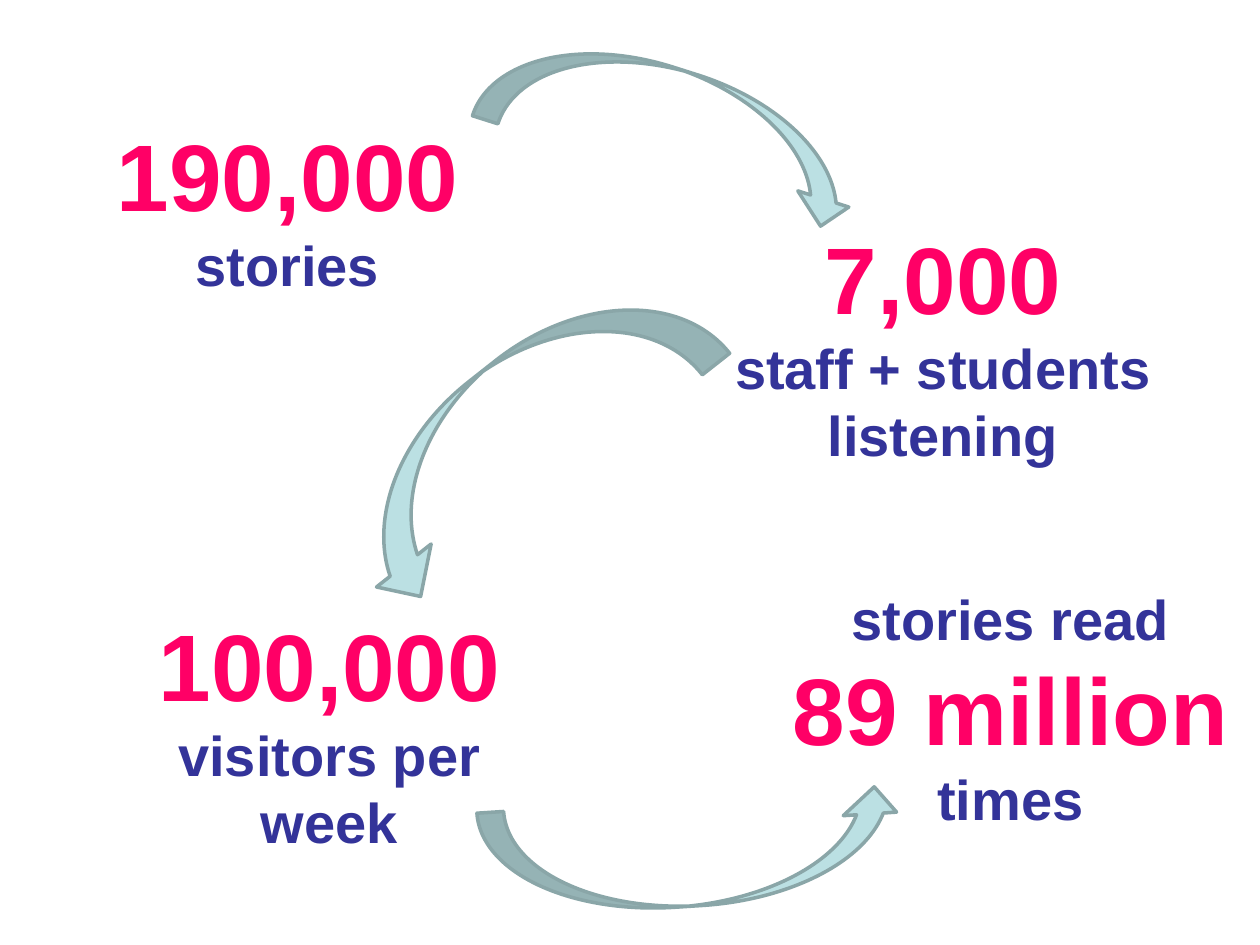
from pptx import Presentation
from pptx.dml.color import RGBColor
from pptx.enum.shapes import MSO_SHAPE as SHAPE
from pptx.enum.text import MSO_AUTO_SIZE as AUTO, PP_ALIGN as ALIGN
from pptx.util import Emu, Pt

PX = 914400 / 126
PINK, NAVY, AQUA, TEAL = "FF0066", "333399", "BBE0E3", "8AA6A8"
BIG = {"size": Pt(54), "color": PINK}
SMALL = {"size": Pt(32), "color": NAVY}


def emu(*lengths):
    return [Emu(round(n * PX)) for n in lengths]


def rgb(code):
    return RGBColor.from_string(code)


def add_figure(s, box, lines):
    """A centred stack of lines, each with its own format."""
    tf = s.shapes.add_textbox(*emu(*box)).text_frame
    tf.word_wrap = True
    tf.auto_size = AUTO.SHAPE_TO_FIT_TEXT
    for i, (text, style) in enumerate(lines):
        p = tf.add_paragraph() if i else tf.paragraphs[0]
        p.alignment = ALIGN.CENTER
        r = p.add_run()
        r.text = text
        r.font.color.rgb = rgb(style["color"])
        font = {"name": "Arial", "bold": True, "size": style["size"]}
        for name, value in font.items():
            setattr(r.font, name, value)


def add_arrow(s, box, rotation, flip=None):
    """A curved arrow, turned and optionally mirrored."""
    sp = s.shapes.add_shape(SHAPE.CURVED_LEFT_ARROW, *emu(*box))
    sp.rotation = rotation
    if flip:
        sp._element.spPr.xfrm.set(flip, "1")
    sp.shadow.inherit = False
    sp.fill.solid()
    sp.fill.fore_color.rgb = rgb(AQUA)
    sp.line.color.rgb = rgb(TEAL)
    sp.line.width = Pt(2)


def build_slide(prs):
    s = prs.slides.add_slide(prs.slide_layouts[6])

    # Figures
    add_figure(s, (74, 111, 427, 195),
               [("190,000", BIG), ("stories", SMALL)])
    add_figure(s, (116, 601, 427, 263),
               [("100,000", BIG), ("visitors per week", SMALL)])
    add_figure(s, (776, 578, 469, 263),
               [("stories read", SMALL), ("89 million", BIG), ("times", SMALL)])
    add_figure(s, (660, 214, 566, 263),
               [("7,000", BIG), ("staff + students listening", SMALL)])

    # Arrows from one figure to the next
    add_arrow(s, (622, -72, 107, 392), 287.6)
    add_arrow(s, (639, 640, 107, 425), 86.2, "flipV")
    add_arrow(s, (449, 217, 139, 428), 51.8, "flipH")


def main():
    prs = Presentation()
    prs.slide_width, prs.slide_height = emu(1260, 945)
    build_slide(prs)
    prs.save("out.pptx")


if __name__ == "__main__":
    main()
